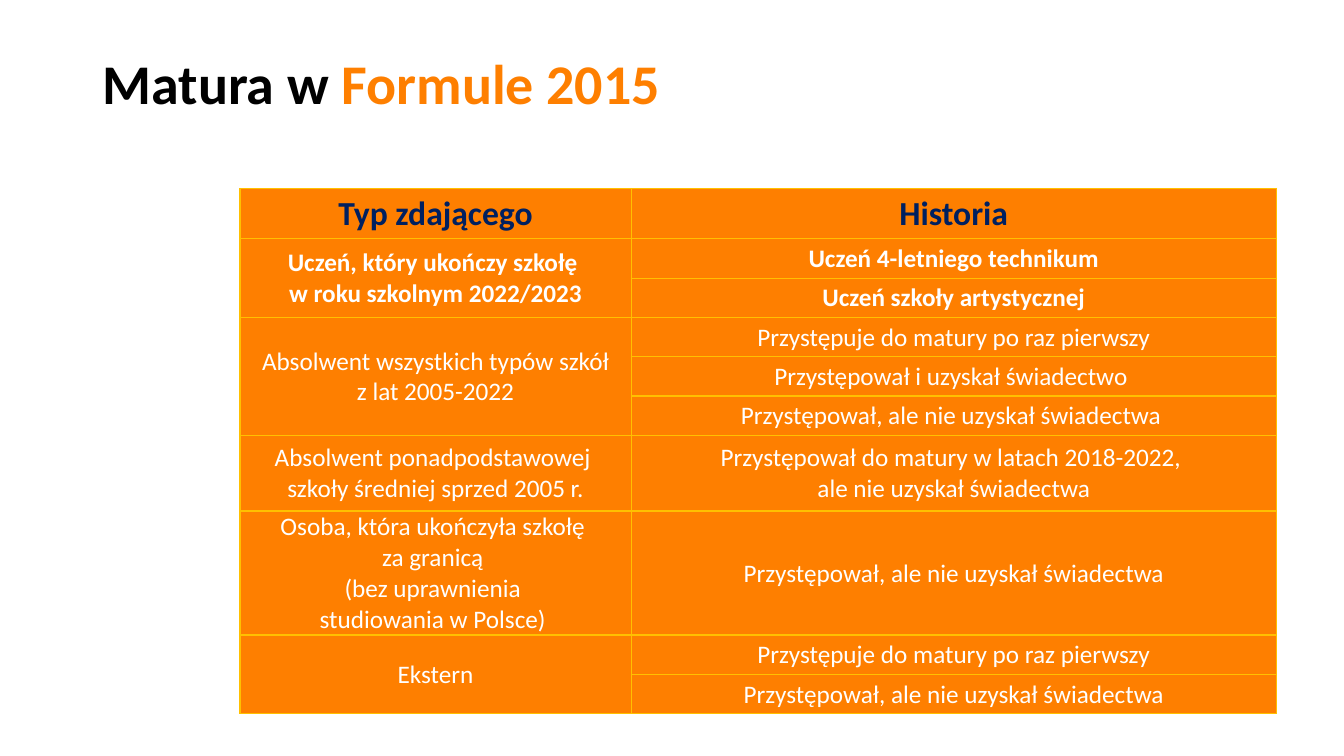
import pptx
import pptx.dml.color
import pptx.enum.text
import pptx.oxml
import pptx.oxml.ns
import pptx.util
from dataclasses import dataclass
from pptx.util import Inches

TITLE = [("Matura w ", "black"), ("Formule 2015", "orange")]
HEADINGS = ("Typ zdającego", "Historia")

# Candidate type, bold or not, and (history, row height) entries; \v is a line break
CANDIDATES = [
    ("Uczeń, który ukończy szkołę \vw roku szkolnym 2022/2023", True, [
        ("Uczeń 4-letniego technikum", 0.39),
        ("Uczeń szkoły artystycznej", 0.39),
    ]),
    ("Absolwent wszystkich typów szkół\vz lat 2005-2022", False, [
        ("Przystępuje do matury po raz pierwszy", 0.39),
        ("Przystępował i uzyskał świadectwo ", 0.39),
        ("Przystępował, ale nie uzyskał świadectwa ", 0.39),
    ]),
    ("Absolwent ponadpodstawowej \nszkoły średniej sprzed 2005 r.", False, [
        ("Przystępował do matury w latach 2018-2022, \nale nie uzyskał świadectwa", 0.75),
    ]),
    ("Osoba, która ukończyła szkołę \nza granicą \n(bez uprawnienia \nstudiowania w Polsce) ", False, [
        ("Przystępował, ale nie uzyskał świadectwa", 1.22),
    ]),
    ("Ekstern", False, [
        ("Przystępuje do matury po raz pierwszy", 0.39),
        ("Przystępował, ale nie uzyskał świadectwa", 0.39),
    ]),
]
COLUMN_WIDTHS = (3.88, 6.4)
HEADING_HEIGHT = 0.5


@dataclass(frozen=True)
class Theme:
    font: str = "Calibri"
    black: str = "000000"
    orange: str = "FE7F00"
    navy: str = "002060"
    white: str = "FFFFFF"
    border: str = "FFC000"
    title_size: int = 40
    heading_size: int = 24
    cell_size: int = 18


THEME = Theme()


def rgb(color):
    return pptx.dml.color.RGBColor.from_string(color)


def style_font(font, size, color, bold):
    font.name = THEME.font
    font.size = pptx.util.Pt(size)
    font.bold = bold
    font.color.rgb = rgb(color)


def add_borders(cell):
    properties = cell._tc.get_or_add_tcPr()
    for position, side in enumerate(("lnL", "lnR", "lnT", "lnB")):
        properties.insert(position, pptx.oxml.parse_xml(
            f'<a:{side} {pptx.oxml.ns.nsdecls("a")} w="12700"><a:solidFill>'
            f'<a:srgbClr val="{THEME.border}"/></a:solidFill></a:{side}>'))


def fill_cell(cell, text, size, color, bold):
    cell.text_frame.text = text
    for paragraph in cell.text_frame.paragraphs:
        paragraph.alignment = pptx.enum.text.PP_ALIGN.CENTER
        for run in paragraph.runs:
            style_font(run.font, size, color, bold)


def add_title(slide):
    title = slide.shapes.title
    title.left, title.top = Inches(0.92), Inches(0.13)
    title.width, title.height = Inches(11.5), Inches(1.45)
    frame = title.text_frame
    frame.auto_size = pptx.enum.text.MSO_AUTO_SIZE.NONE
    frame.vertical_anchor = pptx.enum.text.MSO_ANCHOR.MIDDLE
    paragraph = frame.paragraphs[0]
    paragraph.alignment = pptx.enum.text.PP_ALIGN.LEFT
    paragraph.line_spacing = 0.9
    for text, color in TITLE:
        run = paragraph.add_run()
        run.text = text
        style_font(run.font, THEME.title_size, getattr(THEME, color), True)


def add_candidates_table(slide):
    heights = [HEADING_HEIGHT] + [
        height for _, _, histories in CANDIDATES for _, height in histories]
    table = slide.shapes.add_table(
        len(heights), len(COLUMN_WIDTHS), Inches(2.38), Inches(1.87),
        Inches(sum(COLUMN_WIDTHS)), Inches(sum(heights))).table
    table.first_row = table.horz_banding = False
    for column, width in zip(table.columns, COLUMN_WIDTHS):
        column.width = Inches(width)
    for row, height in zip(table.rows, heights):
        row.height = Inches(height)

    for cell in table.iter_cells():
        cell.fill.solid()
        cell.fill.fore_color.rgb = rgb(THEME.orange)
        cell.vertical_anchor = pptx.enum.text.MSO_ANCHOR.MIDDLE
        cell.margin_left = cell.margin_right = cell.margin_top = Inches(0.01)
        cell.margin_bottom = 0
        add_borders(cell)

    for column, heading in enumerate(HEADINGS):
        fill_cell(table.cell(0, column), heading, THEME.heading_size, THEME.navy, True)
    first = 1
    for candidate, bold, histories in CANDIDATES:
        last = first + len(histories) - 1
        if last > first:
            table.cell(first, 0).merge(table.cell(last, 0))
        fill_cell(table.cell(first, 0), candidate, THEME.cell_size, THEME.white, bold)
        for row, (history, _) in enumerate(histories, first):
            fill_cell(table.cell(row, 1), history, THEME.cell_size, THEME.white, bold)
        first = last + 1


def main():
    presentation = pptx.Presentation()
    presentation.slide_width = Inches(13.33)
    presentation.slide_height = Inches(7.5)
    slide = presentation.slides.add_slide(presentation.slide_layouts[5])
    add_title(slide)
    add_candidates_table(slide)
    presentation.save("out.pptx")


if __name__ == "__main__":
    main()
